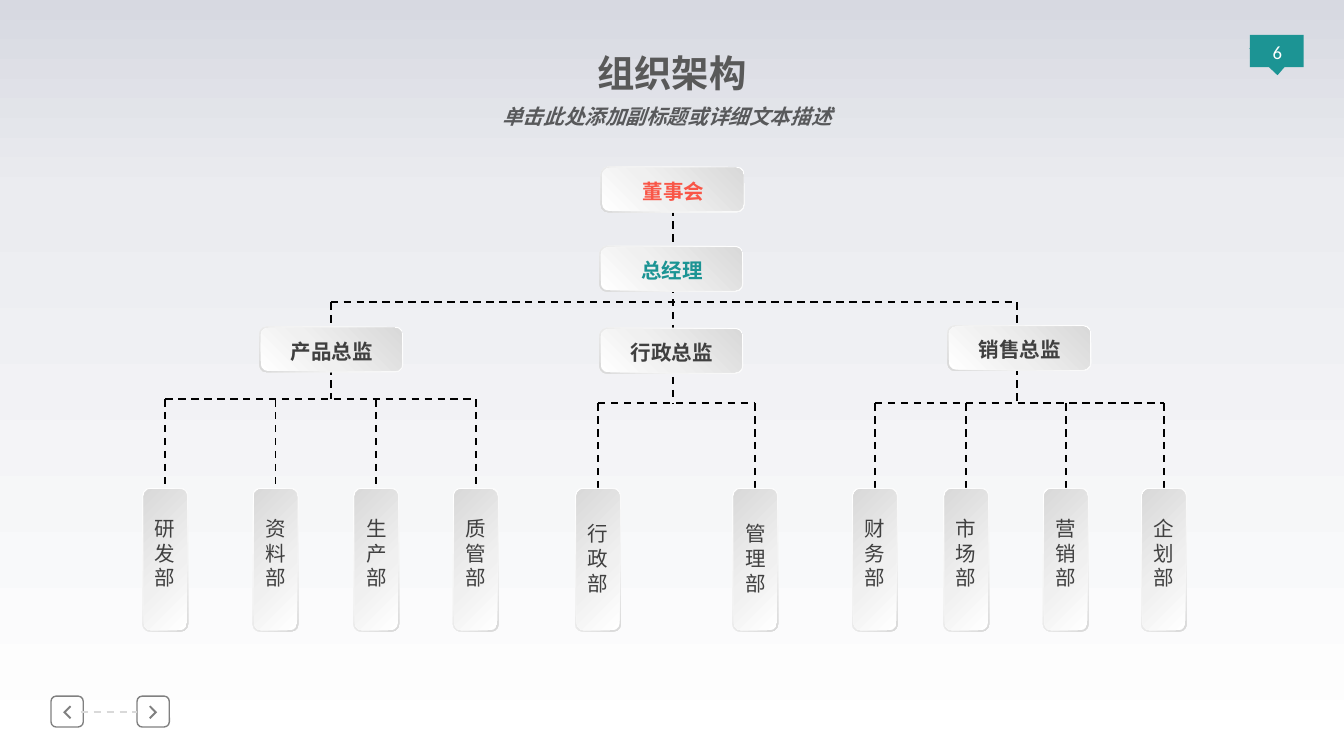
from dataclasses import dataclass

from lxml.etree import SubElement
from pptx import Presentation
from pptx.dml.color import RGBColor
from pptx.enum.dml import MSO_LINE
from pptx.enum.shapes import MSO_CONNECTOR, MSO_SHAPE
from pptx.enum.text import MSO_ANCHOR, MSO_AUTO_SIZE, PP_ALIGN
from pptx.oxml.ns import qn
from pptx.util import Inches, Pt


@dataclass(frozen=True)
class Theme:
    font: str = "Noto Sans CJK SC"
    number_font: str = "Calibri"
    title_size: float = 20
    text_size: float = 11
    number_size: float = 10
    line_ratio: float = 1.2
    teal: str = "1C9494"
    red: str = "F95647"
    text: str = "404040"
    title: str = "595959"
    subtitle: str = "58595B"
    white: str = "FFFFFF"
    black: str = "000000"
    navigation: str = "808080"
    navigation_line: str = "D9D9D9"
    background: tuple = ((0, "D7D9E1"), (26, "EBECF0"), (100, "FFFFFF"))
    rim: tuple = ((0, "FFFFFF"), (62, "F2F2F2"), (100, "D9D9D9"))
    face: tuple = ((0, "FFFFFF"), (42, "F0F0F0"), (100, "D9D9D9"))


@dataclass(frozen=True)
class Branch:
    director: str
    left: float
    top: float
    stem_x: float
    stem_top: float
    bus_y: float
    label_top: float
    departments: tuple  # (name, left)


THEME = Theme()
CARD_LONG, CARD_SHORT, RIM = 1.07, 0.34, 0.01
DEPARTMENT_TOP, DROP_END = 3.63, 4.38
DIRECTOR_BUS_Y = 2.25

BRANCHES = (
    Branch("产品总监", 1.93, 2.43, 2.46, DIRECTOR_BUS_Y, 2.97, 3.84,
           (("研发部", 1.06), ("资料部", 1.88), ("生产部", 2.63), ("质管部", 3.37))),
    Branch("行政总监", 4.46, 2.44, 5.01, 1.55, 3, 3.88,
           (("行政部", 4.28), ("管理部", 5.45))),
    Branch("销售总监", 7.05, 2.42, 7.57, DIRECTOR_BUS_Y, 3, 3.84,
           (("财务部", 6.34), ("市场部", 7.02), ("营销部", 7.76), ("企划部", 8.49))),
)


def color(value):
    return RGBColor.from_string(value)


def set_gradient(fill, element, stops, angle):
    """Apply a linear gradient; the angle is clockwise, the element holds the fill."""
    fill.gradient()
    fill.gradient_angle = (360 - angle) % 360
    stop_list = next(element.iter(qn("a:gsLst")))
    for stop in list(stop_list):
        stop_list.remove(stop)
    for position, value in stops:
        stop = SubElement(stop_list, qn("a:gs"), pos=str(position * 1000))
        SubElement(stop, qn("a:srgbClr"), val=value)


def write_text(shape, text, size, value, font_name=THEME.font, bold=False, italic=False):
    frame = shape.text_frame
    frame.word_wrap = True
    frame.auto_size = MSO_AUTO_SIZE.NONE
    frame.vertical_anchor = MSO_ANCHOR.TOP
    frame.margin_left = frame.margin_right = frame.margin_top = frame.margin_bottom = 0
    paragraph = frame.paragraphs[0]
    paragraph.alignment = PP_ALIGN.CENTER
    paragraph.space_before = Pt(0)
    paragraph.line_spacing = Pt(size * THEME.line_ratio)
    run = paragraph.add_run()
    run.text = text
    font = run.font
    font.name, font.size, font.bold, font.italic = font_name, Pt(size), bold, italic
    font.color.rgb = color(value)
    SubElement(run.font._element, qn("a:ea"), typeface=font_name)


def place(shape, left, top, width, height):
    shape.left, shape.top = Inches(left), Inches(top)
    shape.width, shape.height = Inches(width), Inches(height)


def add_plain_shape(shapes, kind, left, top, width, height):
    shape = shapes.add_shape(kind, Inches(left), Inches(top), Inches(width), Inches(height))
    shape.shadow.inherit = False
    shape.line.fill.background()
    return shape


def add_label(shapes, text, left, top, width, height, size, value, **style):
    box = shapes.add_textbox(Inches(left), Inches(top), Inches(width), Inches(height))
    write_text(box, text, size, value, **style)
    return box


def add_dashed_line(shapes, start_x, start_y, end_x, end_y, value=THEME.black):
    line = shapes.add_connector(MSO_CONNECTOR.STRAIGHT, Inches(start_x), Inches(start_y),
                                Inches(end_x), Inches(end_y))
    line.line.color.rgb = color(value)
    line.line.width = Pt(1)
    line.line.dash_style = MSO_LINE.DASH
    SubElement(line.element.spPr, qn("a:effectLst"))


def add_card(shapes, left, top, width, height, rim_angle, face_angle):
    """Add a raised card: a face laid over a rim shaded the other way."""
    card = shapes.add_group_shape().shapes
    for inset, stops, angle in ((0, THEME.rim, rim_angle), (RIM, THEME.face, face_angle)):
        shape = add_plain_shape(card, MSO_SHAPE.ROUNDED_RECTANGLE, left + inset, top + inset,
                                width - 2 * inset, height - 2 * inset)
        set_gradient(shape.fill, shape.element.spPr, stops, angle)
    return card


def add_leader(shapes, name, left, top, value=THEME.text):
    card = add_card(shapes, left, top, CARD_LONG, CARD_SHORT, 135, 315)
    add_label(card, name, left + 0.23, top + 0.09, 0.62, 0.19,
              THEME.text_size, value, bold=True)


def add_department(shapes, name, left, label_top):
    """Add an upright card, narrow enough to stack its name one character a line."""
    card = add_card(shapes, left, DEPARTMENT_TOP, CARD_SHORT, CARD_LONG, 45, 225)
    add_label(card, name, left + 0.04, label_top, CARD_SHORT - 0.08, 0.56,
              THEME.text_size, THEME.text)


def add_branch_lines(shapes, branch):
    centers = [left + CARD_SHORT / 2 for _, left in branch.departments]
    add_dashed_line(shapes, centers[0], branch.bus_y, centers[-1], branch.bus_y)
    add_dashed_line(shapes, branch.stem_x, branch.stem_top, branch.stem_x, branch.bus_y)
    for center in centers:
        add_dashed_line(shapes, center, branch.bus_y, center, DROP_END)


def add_page_marker(shapes, number):
    for kind, top, height, rotation in ((MSO_SHAPE.RECTANGLE, 0.26, 0.24, 0),
                                        (MSO_SHAPE.ISOSCELES_TRIANGLE, 0.35, 0.21, 177)):
        shape = add_plain_shape(shapes, kind, 9.3, top, 0.4, height)
        shape.fill.solid()
        shape.fill.fore_color.rgb = color(THEME.teal)
        shape.rotation = rotation
    label = add_label(shapes, number, 9.32, 0.22, 0.37, 0.38, THEME.number_size,
                      THEME.white, font_name=THEME.number_font)
    label.text_frame.vertical_anchor = MSO_ANCHOR.MIDDLE
    label.text_frame.margin_bottom = Inches(0.05)


def add_navigation_button(shapes, left, direction):
    """Add a framed chevron; direction is -1 for back and 1 for forward."""
    button = shapes.add_group_shape().shapes
    frame = add_plain_shape(button, MSO_SHAPE.ROUNDED_RECTANGLE, left, 5.18, 0.24, 0.23)
    frame.fill.background()
    frame.line.color.rgb = color(THEME.navigation)
    frame.line.width = Pt(0.75)
    center = left + 0.12
    outline = ((-0.02, 5.25), (-0.03, 5.26), (0.01, 5.3), (-0.03, 5.34), (-0.02, 5.35), (0.03, 5.3))
    points = [(Inches(center + direction * x), Inches(y)) for x, y in outline]
    builder = button.build_freeform(*points[0])
    builder.add_line_segments(points[1:], close=True)
    chevron = builder.convert_to_shape()
    chevron.shadow.inherit = False
    chevron.fill.solid()
    chevron.fill.fore_color.rgb = color(THEME.navigation)
    chevron.line.fill.background()


def main():
    presentation = Presentation()
    presentation.slide_width = Inches(10)
    presentation.slide_height = presentation.slide_width * 9 // 16
    slide = presentation.slides.add_slide(presentation.slide_layouts[0])
    shapes = slide.shapes
    set_gradient(slide.background.fill, slide.element, THEME.background, 90)

    title, subtitle = slide.placeholders
    place(title, 3.9, 0.37, 2.2, 0.34)
    write_text(title, "组织架构", THEME.title_size, THEME.title, bold=True)
    place(subtitle, 3.63, 0.77, 2.67, 0.19)
    write_text(subtitle, "单击此处添加副标题或详细文本描述", THEME.text_size,
               THEME.subtitle, bold=True, italic=True)

    add_page_marker(shapes, "6")
    add_navigation_button(shapes, 0.38, -1)
    add_navigation_button(shapes, 1.02, 1)
    add_dashed_line(shapes, 0.6, 5.3, 1.02, 5.3, THEME.navigation_line)

    add_dashed_line(shapes, BRANCHES[0].stem_x, DIRECTOR_BUS_Y, BRANCHES[-1].stem_x, DIRECTOR_BUS_Y)
    for branch in BRANCHES:
        add_branch_lines(shapes, branch)
    add_leader(shapes, "董事会", 4.47, 1.24, THEME.red)
    add_leader(shapes, "总经理", 4.46, 1.83, THEME.teal)
    for branch in BRANCHES:
        add_leader(shapes, branch.director, branch.left, branch.top)
        for name, left in branch.departments:
            add_department(shapes, name, left, branch.label_top)
    presentation.save("out.pptx")


if __name__ == "__main__":
    main()
